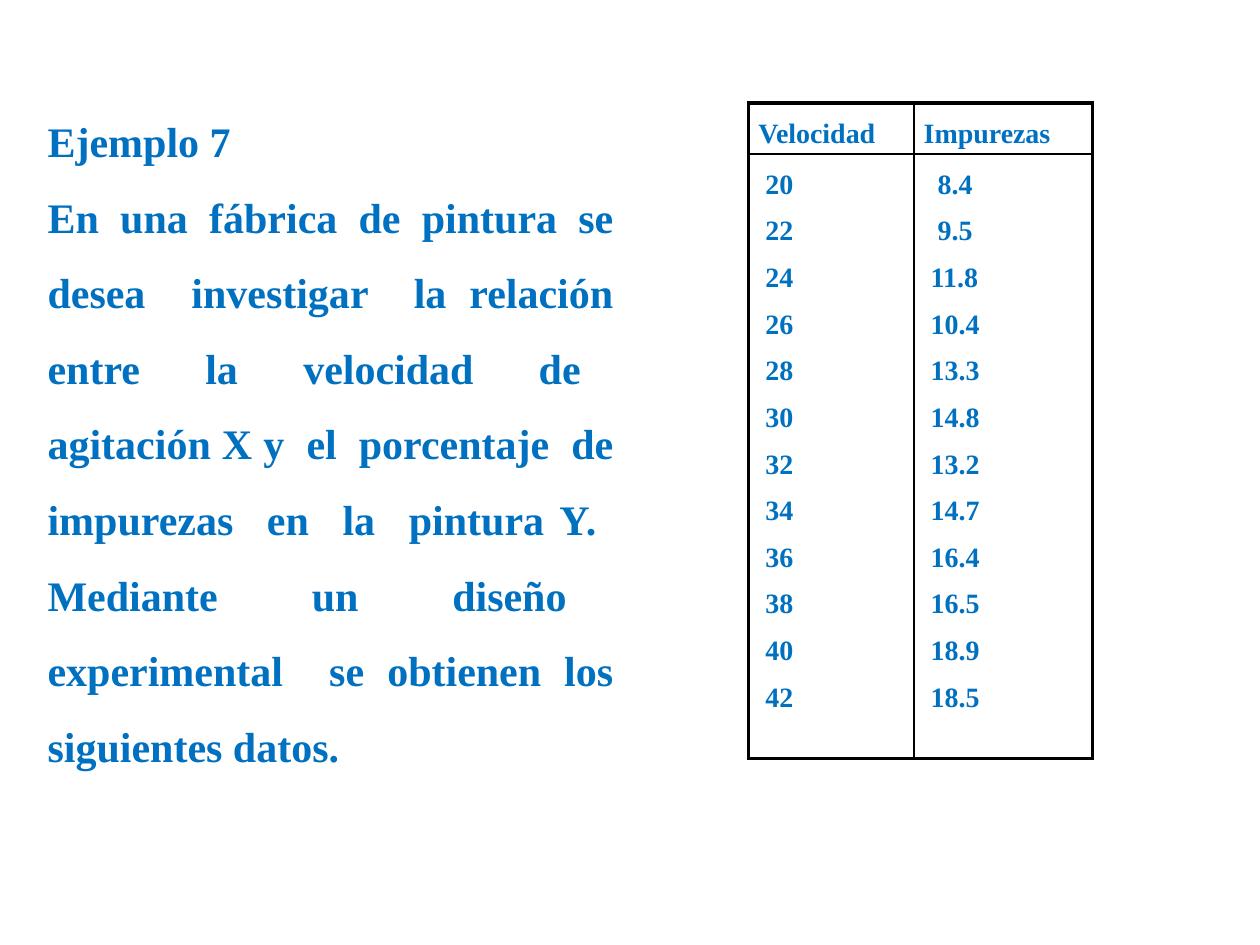
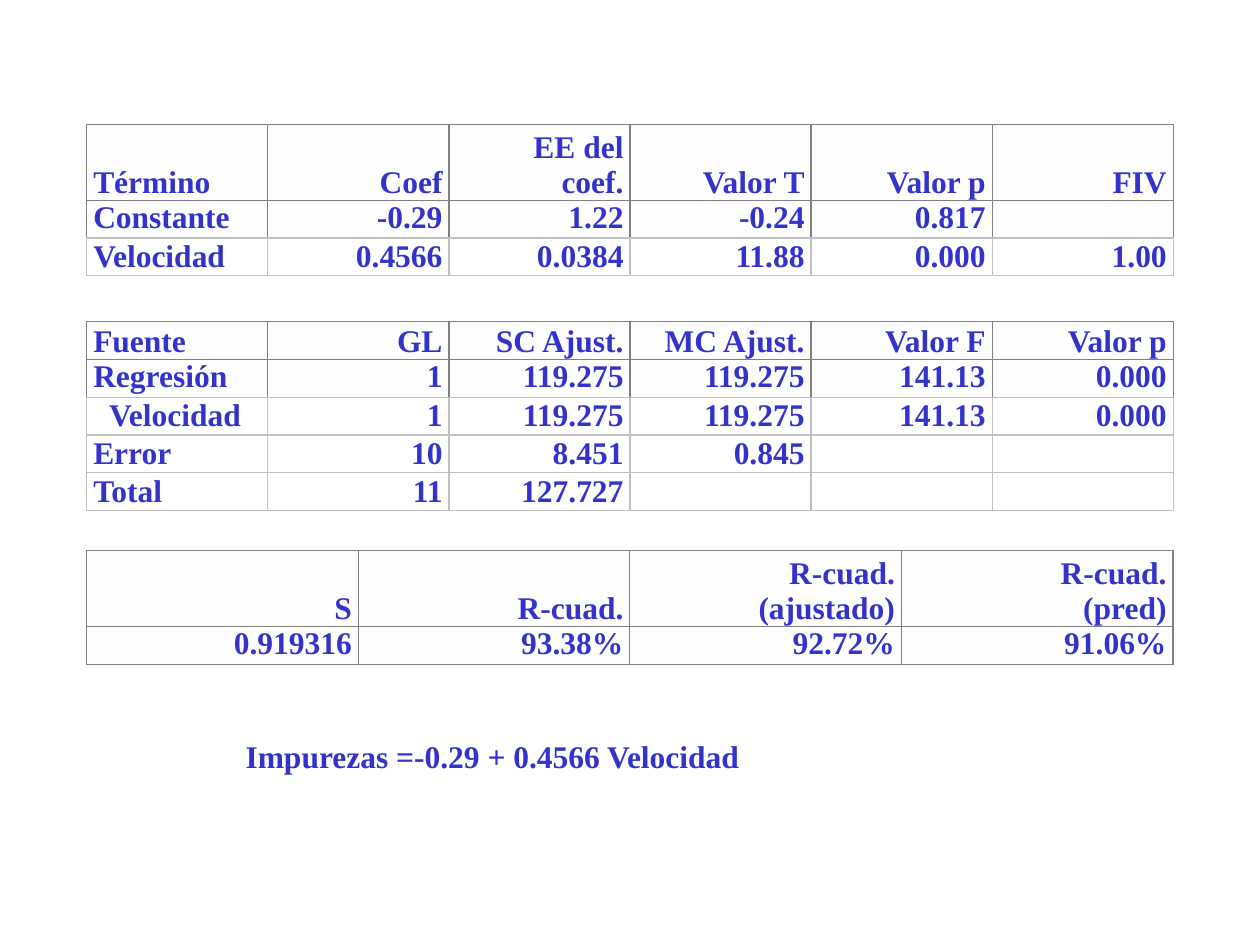
import dataclasses

import lxml.etree
import pptx
import pptx.dml.color
import pptx.enum.text
import pptx.oxml.ns
import pptx.util

Cm = pptx.util.Cm
Pt = pptx.util.Pt
Align = pptx.enum.text.PP_ALIGN
Anchor = pptx.enum.text.MSO_ANCHOR


@dataclasses.dataclass(frozen=True)
class Theme:
    font: str = "Times New Roman"
    example_color: str = "0070C0"
    result_color: str = "3333CC"
    frame_line: str = "000000"
    dark_line: str = "808080"
    light_line: str = "BFBFBF"
    cell_fill: str = "FEFEFE"
    statement_size: int = 24
    data_size: int = 16
    result_size: int = 18
    thick: float = 2.25
    thin: float = 1
    hairline: float = 0.75


@dataclasses.dataclass(frozen=True)
class Box:
    """A rectangle in centimetres."""
    left: float
    top: float
    width: float
    height: float

    def emu(self):
        return [Cm(length) for length in dataclasses.astuple(self)]


THEME = Theme()
ROW_HEIGHT = 0.76

STATEMENT = [
    "Ejemplo 7",
    "En una fábrica de pintura se desea  investigar  la relación entre  la  velocidad  de  "
    "agitación X y  el  porcentaje  de impurezas  en  la  pintura Y.  Mediante  un  diseño  "
    "experimental  se obtienen los siguientes datos.",
]
MEASUREMENTS = {
    "Velocidad": [str(speed) for speed in range(20, 43, 2)],
    "Impurezas": ["8.4", "9.5", "11.8", "10.4", "13.3", "14.8",
                  "13.2", "14.7", "16.4", "16.5", "18.9", "18.5"],
}
COEFFICIENTS = [
    ["Término", "Coef", "EE del\ncoef.", "Valor T", "Valor p", "FIV"],
    ["Constante", "-0.29", "1.22", "-0.24", "0.817", ""],
    ["Velocidad", "0.4566", "0.0384", "11.88", "0.000", "1.00"],
]
VARIANCE = [
    ["Fuente", "GL", "SC Ajust.", "MC Ajust.", "Valor F", "Valor p"],
    ["Regresión", "1", "119.275", "119.275", "141.13", "0.000"],
    ["Velocidad", "1", "119.275", "119.275", "141.13", "0.000"],
    ["Error", "10", "8.451", "0.845", "", ""],
    ["Total", "11", "127.727", "", "", ""],
]
MODEL_SUMMARY = [
    ["S", "R-cuad.", "R-cuad.\n(ajustado)", "R-cuad.\n(pred)"],
    ["0.919316", "93.38%", "92.72%", "91.06%"],
]
EQUATION = "Impurezas =-0.29 + 0.4566 Velocidad"


def write_lines(frame, lines, *, size, color, align=Align.LEFT, spacing=None,
                before=0, after=0, indents=None):
    """Write one paragraph per line; before and after pad the whole block."""
    for number, line in enumerate(lines):
        para = frame.add_paragraph() if number else frame.paragraphs[0]
        para.alignment = align
        para.line_spacing = spacing
        para.space_before = Pt(before if number == 0 else 0)
        para.space_after = Pt(after if number == len(lines) - 1 else 0)
        if indents:
            para._p.get_or_add_pPr().set("marL", str(Pt(indents[number])))
        for part_number, part in enumerate(line.split("\n")):
            if part_number:
                para.add_line_break()
            span = para.add_run()
            span.text = part
            span.font.name = THEME.font
            span.font.size = Pt(size)
            span.font.bold = True
            span.font.color.rgb = pptx.dml.color.RGBColor.from_string(color)


def add_text(page, box, lines, *, anchor=Anchor.TOP, **text_format):
    frame = page.shapes.add_textbox(*box.emu()).text_frame
    frame.word_wrap = True
    frame.vertical_anchor = anchor
    write_lines(frame, lines, **text_format)


def add_plain_table(page, box, widths, heights):
    table = page.shapes.add_table(len(heights), len(widths), *box.emu()).table
    table.first_row = table.horz_banding = False
    for column, width in zip(table.columns, widths):
        column.width = Cm(width)
    for row, height in zip(table.rows, heights):
        row.height = Cm(height)
    return table


def set_cell(cell, *, side_margin, borders, anchor=Anchor.TOP, fill=None):
    """Set margins, anchor, borders ({side: (colour, points)}) and fill."""
    cell.margin_left = cell.margin_right = Cm(side_margin)
    cell.margin_top = cell.margin_bottom = 0
    cell.vertical_anchor = anchor
    qn = pptx.oxml.ns.qn
    properties = cell._tc.get_or_add_tcPr()
    for side in "LRTB":
        color, points = borders[side]
        line = lxml.etree.SubElement(properties, qn(f"a:ln{side}"), w=str(Pt(points)))
        solid = lxml.etree.SubElement(line, qn("a:solidFill"))
        lxml.etree.SubElement(solid, qn("a:srgbClr"), val=color)
    if fill:
        cell.fill.solid()
        cell.fill.fore_color.rgb = pptx.dml.color.RGBColor.from_string(fill)
    else:
        cell.fill.background()


def add_measurements(page, box):
    """Framed table with a header row and one tall cell per variable."""
    widths = [box.width * 0.48, box.width * 0.52]
    heights = [1.02, box.height - 1.02]
    table = add_plain_table(page, box, widths, heights)
    for column, (name, values) in enumerate(MEASUREMENTS.items()):
        digits = max(len(value) for value in values)
        indents = [4 + 4 * (digits - len(value)) for value in values]
        for row, (lines, shifts) in enumerate([([name], [0]), (values, indents)]):
            outer = {"L": column == 0, "R": column == 1, "T": row == 0, "B": row == 1}
            borders = {side: (THEME.frame_line, THEME.thick if edge else THEME.thin)
                       for side, edge in outer.items()}
            cell = table.cell(row, column)
            set_cell(cell, side_margin=0.2, borders=borders)
            write_lines(cell.text_frame, lines, size=THEME.data_size,
                        color=THEME.example_color, spacing=1.5, before=4.5,
                        after=2.7, indents=shifts)


def add_results(page, box, rows, *, label_column=True, nested_row=None):
    """Regression output: dark lines around the first two rows, light below."""
    columns = len(rows[0])
    heights = [ROW_HEIGHT * max(text.count("\n") + 1 for text in row) for row in rows]
    table = add_plain_table(page, box, [box.width / columns] * columns, heights)
    for row, texts in enumerate(rows):
        side_color = THEME.dark_line if row < 2 else THEME.light_line
        last_dark = row == 0 or len(rows) == 2
        borders = dict.fromkeys("LRT", (side_color, THEME.hairline))
        borders["B"] = (THEME.dark_line if last_dark else THEME.light_line, THEME.hairline)
        anchor = {0: Anchor.BOTTOM, 1: Anchor.TOP}.get(row, Anchor.MIDDLE)
        for column, text in enumerate(texts):
            is_label = label_column and column == 0
            cell = table.cell(row, column)
            set_cell(cell, side_margin=0.13, borders=borders, anchor=anchor,
                     fill=THEME.cell_fill if row < 2 else None)
            write_lines(cell.text_frame, [text], size=THEME.result_size,
                        color=THEME.result_color,
                        align=Align.LEFT if is_label else Align.RIGHT,
                        indents=[9] if is_label and row == nested_row else None)


def build_example(page):
    add_text(page, Box(0.71, 1.63, 11.91, 14.1), STATEMENT, anchor=Anchor.MIDDLE,
             size=THEME.statement_size, color=THEME.example_color,
             align=Align.JUSTIFY, spacing=1.5)
    add_measurements(page, Box(15.09, 2.08, 6.94, 13.21))


def build_regression(page):
    left, width = 1.75, 21.9
    add_results(page, Box(left, 6.48, width, 5 * ROW_HEIGHT), VARIANCE, nested_row=2)
    add_results(page, Box(left, 11.1, width, 3 * ROW_HEIGHT), MODEL_SUMMARY,
                label_column=False)
    add_results(page, Box(left, 2.51, width, 4 * ROW_HEIGHT), COEFFICIENTS)
    add_text(page, Box(4.7, 14.73, 14.81, 1.02), [EQUATION],
             size=THEME.result_size, color=THEME.result_color)


def main():
    deck = pptx.Presentation()
    deck.slide_width, deck.slide_height = Cm(25.4), Cm(19.05)
    blank_layout = deck.slide_layouts[6]
    for build in (build_example, build_regression):
        build(deck.slides.add_slide(blank_layout))
    deck.save("out.pptx")


if __name__ == "__main__":
    main()
